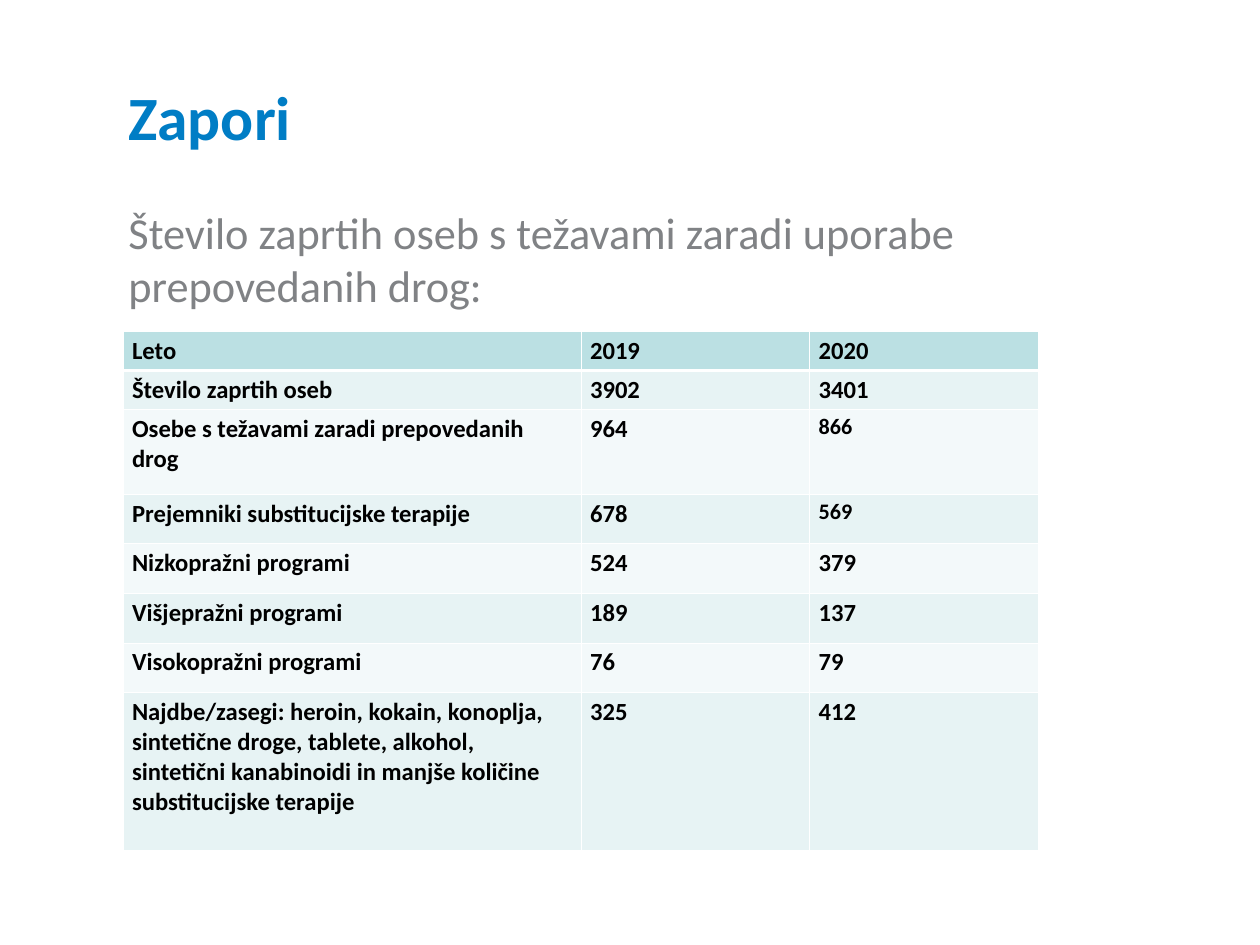
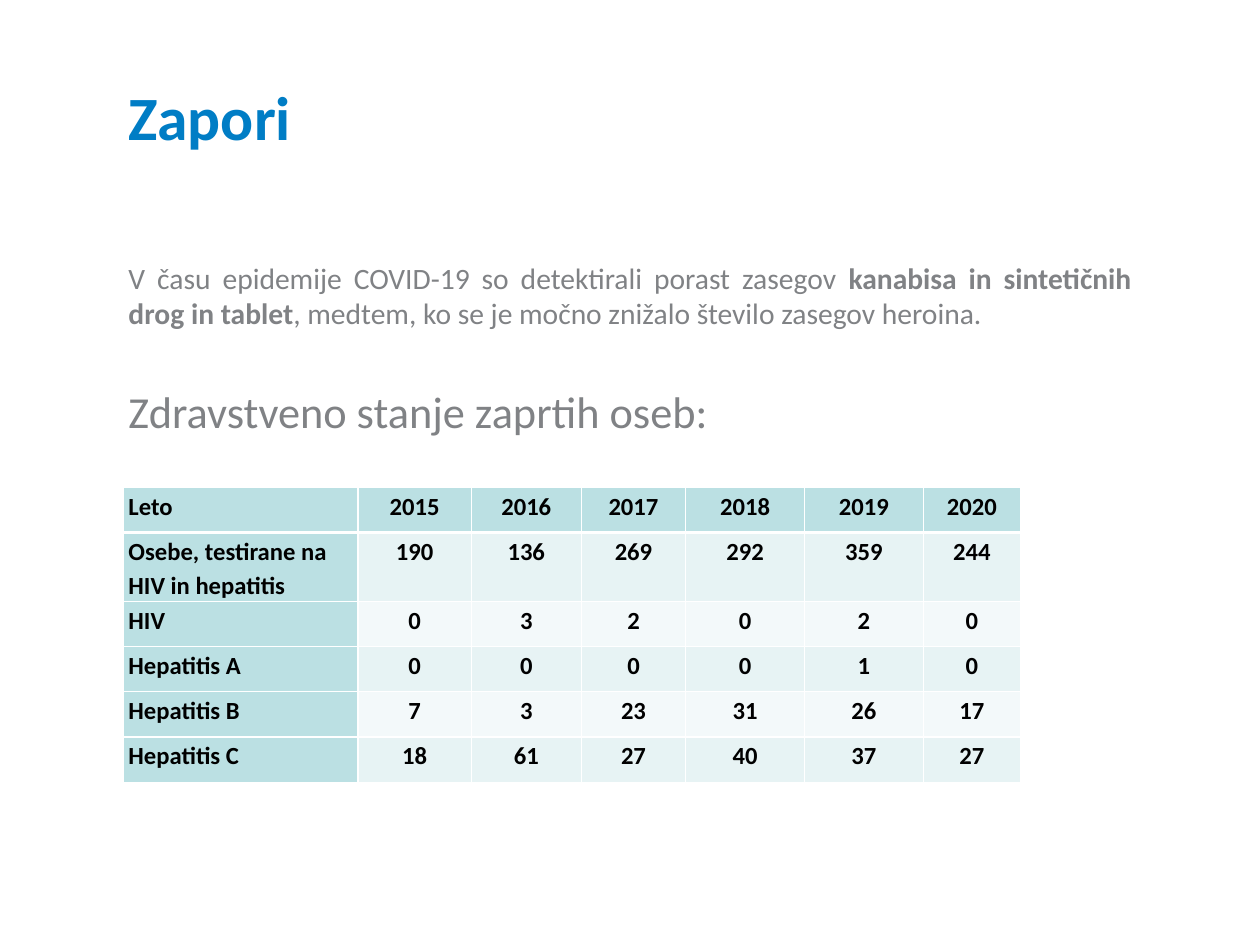
from dataclasses import dataclass

from lxml import etree
from pptx import Presentation
from pptx import util as u
from pptx.dml.color import RGBColor
from pptx.enum import text
from pptx.oxml.ns import qn


@dataclass(frozen=True)
class Theme:
    font: str = "Calibri"
    title_color: str = "007DC5"
    body_color: str = "808285"
    cell_color: str = "000000"
    header_fill: str = "BBE0E3"
    band_fills: tuple = ("E7F3F4", "F3F9FA")
    border_color: str = "FFFFFF"
    title_size: int = 50
    heading_size: int = 36
    body_size: int = 24
    cell_size: int = 20
    small_cell_size: int = 18


THEME = Theme()
LEFT, WIDTH = 1.39, 11.44
TITLE_BOX = (LEFT, 0.53, WIDTH, 1.26)
BODY_BOX = (LEFT, 2.26, WIDTH, 6.93)
INSET = 0.06

PRISONER_ROWS = [
    ("Leto", "2019", "2020"),
    ("Število zaprtih oseb", "3902", "3401"),
    ("Osebe s težavami zaradi prepovedanih drog", "964", "866"),
    ("Prejemniki substitucijske terapije", "678", "569"),
    ("Nizkopražni programi", "524", "379"),
    ("Višjepražni programi", "189", "137"),
    ("Visokopražni programi", "76", "79"),
    ("Najdbe/zasegi: heroin, kokain, konoplja, sintetične droge, tablete, alkohol, "
     "sintetični kanabinoidi in manjše količine substitucijske terapije", "325", "412"),
]
HEALTH_ROWS = [
    ("Leto", "2015", "2016", "2017", "2018", "2019", "2020"),
    ("Osebe, testirane na HIV in hepatitis", "190", "136", "269", "292", "359", "244"),
    ("HIV", "0", "3", "2", "0", "2", "0"),
    ("Hepatitis A", "0", "0", "0", "0", "1", "0"),
    ("Hepatitis B", "7", "3", "23", "31", "26", "17"),
    ("Hepatitis C", "18", "61", "27", "40", "37", "27"),
]


def format_font(font, size, color, bold=False):
    font.name = THEME.font
    font.size = u.Pt(size)
    font.bold = bold
    font.color.rgb = RGBColor.from_string(color)


def place_placeholder(shape, box, anchor):
    shape.left, shape.top, shape.width, shape.height = map(u.Inches, box)
    frame = shape.text_frame
    frame.word_wrap = True
    frame.auto_size = text.MSO_AUTO_SIZE.NONE
    frame.vertical_anchor = anchor
    frame.margin_left = frame.margin_right = u.Inches(INSET)
    frame.margin_top = frame.margin_bottom = u.Inches(INSET)
    return frame


def format_body_paragraph(paragraph, size, alignment=text.PP_ALIGN.LEFT, space_before=0):
    properties = paragraph._p.get_or_add_pPr()
    properties.set("marL", "0")
    properties.set("indent", "0")
    etree.SubElement(properties, qn("a:buNone"))
    paragraph.alignment = alignment
    paragraph.space_before = u.Pt(space_before)
    for run in paragraph.runs:
        format_font(run.font, size, THEME.body_color)


def add_titled_slide(presentation, title):
    """Add a slide with its title and return it with the empty body frame."""
    slide = presentation.slides.add_slide(presentation.slide_layouts[1])
    frame = place_placeholder(slide.shapes.title, TITLE_BOX, text.MSO_ANCHOR.BOTTOM)
    frame.text = title
    paragraph = frame.paragraphs[0]
    paragraph.alignment = text.PP_ALIGN.LEFT
    format_font(paragraph.runs[0].font, THEME.title_size, THEME.title_color, True)
    body = place_placeholder(slide.placeholders[1], BODY_BOX, text.MSO_ANCHOR.TOP)
    return slide, body


def set_borders(cell, top=1, bottom=1):
    properties = cell._tc.get_or_add_tcPr()
    widths = {"a:lnL": 1, "a:lnR": 1, "a:lnT": top, "a:lnB": bottom}
    for index, (tag, width) in enumerate(widths.items()):
        line = etree.Element(qn(tag), w=str(u.Pt(width)))
        fill = etree.SubElement(line, qn("a:solidFill"))
        etree.SubElement(fill, qn("a:srgbClr"), val=THEME.border_color)
        properties.insert(index, line)


def add_banded_table(slide, origin, rows, column_widths, row_heights,
                     compact=False, small_cells=()):
    """Add a table; compact gives a filled first column, centred values and tight cells."""
    left, top = origin
    table = slide.shapes.add_table(
        len(rows), len(column_widths), u.Inches(left), u.Inches(top),
        u.Inches(sum(column_widths)), u.Inches(sum(row_heights))).table
    table.first_col = compact
    for column, width in zip(table.columns, column_widths):
        column.width = u.Inches(width)
    for row, height in zip(table.rows, row_heights):
        row.height = u.Inches(height)
    for row_index, values in enumerate(rows):
        for column_index, value in enumerate(values):
            cell = table.cell(row_index, column_index)
            cell.text = value
            is_header = row_index == 0 or (compact and column_index == 0)
            color = THEME.header_fill if is_header else THEME.band_fills[(row_index - 1) % 2]
            cell.fill.solid()
            cell.fill.fore_color.rgb = RGBColor.from_string(color)
            set_borders(cell, top=3 if row_index == 1 else 1, bottom=3 if row_index == 0 else 1)
            paragraph = cell.text_frame.paragraphs[0]
            if compact:
                cell.margin_left = cell.margin_right = u.Inches(INSET)
                cell.margin_top = cell.margin_bottom = 0
                paragraph.line_spacing = 1.15
                if column_index:
                    paragraph.alignment = text.PP_ALIGN.CENTER
            is_small = (row_index, column_index) in small_cells
            size = THEME.small_cell_size if is_small else THEME.cell_size
            format_font(paragraph.runs[0].font, size, THEME.cell_color, True)


def add_prisoners_slide(presentation):
    slide, body = add_titled_slide(presentation, "Zapori")
    body.text = "Število zaprtih oseb s težavami zaradi uporabe prepovedanih drog:"
    format_body_paragraph(body.paragraphs[0], THEME.heading_size)
    add_banded_table(slide, (LEFT, 3.74), PRISONER_ROWS, [5.17, 2.58, 2.58],
                     [0.44] * 2 + [0.96] + [0.56] * 4 + [1.78],
                     small_cells={(2, 2), (3, 2)})


def add_health_slide(presentation):
    slide, body = add_titled_slide(presentation, "Zapori")
    body.margin_top = u.Inches(0.67)
    seizures = body.paragraphs[0]
    for part in ("V času epidemije COVID-19 so detektirali porast zasegov ",
                 "kanabisa in sintetičnih drog in tablet",
                 ", medtem, ko se je močno znižalo število zasegov heroina."):
        seizures.add_run().text = part
    format_body_paragraph(seizures, THEME.body_size, text.PP_ALIGN.JUSTIFY)
    seizures.runs[1].font.bold = True
    heading = body.add_paragraph()
    heading.text = "Zdravstveno stanje zaprtih oseb:"
    format_body_paragraph(heading, THEME.heading_size, text.PP_ALIGN.JUSTIFY, 44)
    add_banded_table(slide, (LEFT, 5.5), HEALTH_ROWS,
                     [2.65, 1.28, 1.24, 1.18, 1.34, 1.34, 1.1],
                     [0.51, 0.77] + [0.51] * 4, compact=True)


def main():
    presentation = Presentation()
    presentation.slide_width = u.Inches(14.22)
    presentation.slide_height = u.Inches(10.67)
    add_prisoners_slide(presentation)
    add_health_slide(presentation)
    presentation.save("out.pptx")


if __name__ == "__main__":
    main()
